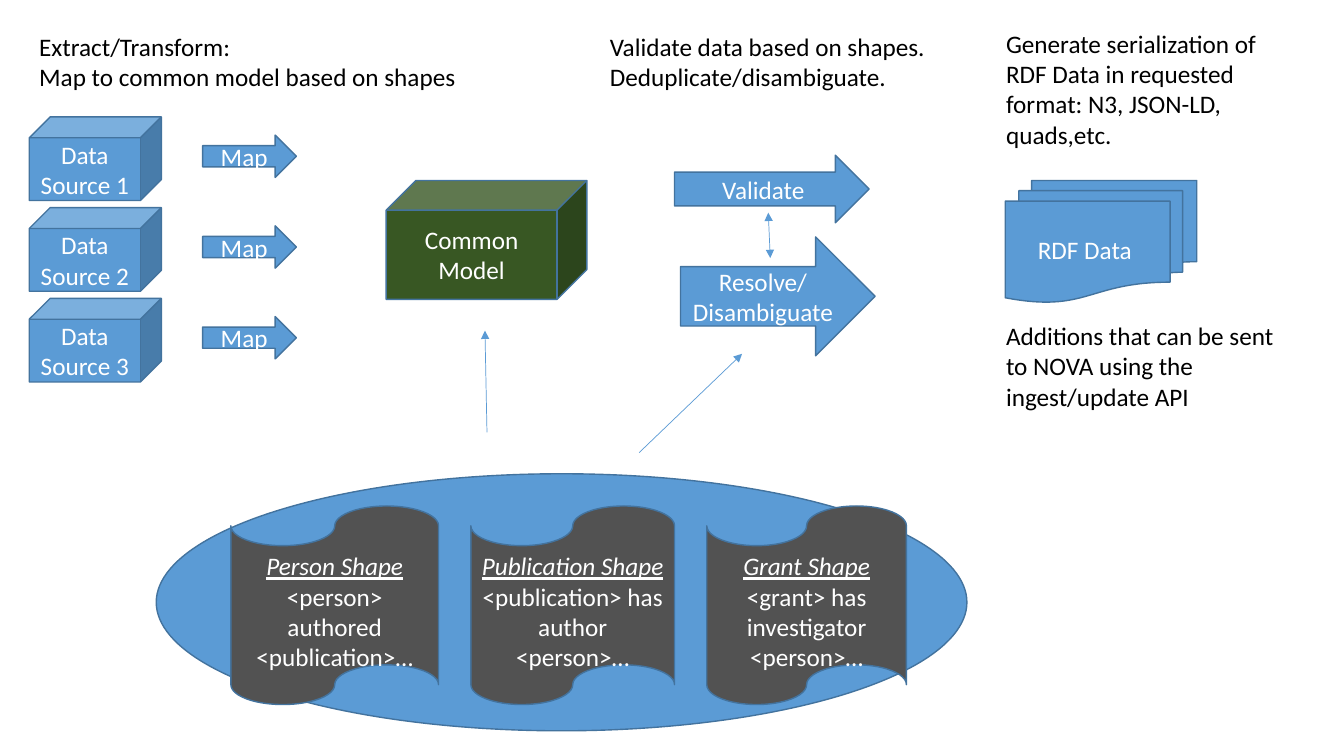
from pptx import Presentation
from pptx.dml.color import RGBColor
from pptx.enum.shapes import MSO_CONNECTOR, MSO_SHAPE
from pptx.enum.text import MSO_ANCHOR, PP_ALIGN
from pptx.oxml.ns import qn
from pptx.util import Inches, Pt
from lxml.etree import SubElement

COLORS = {"blue": "5B9BD5", "edge": "43739E", "green": "385723",
          "gray": "525252", "white": "FFFFFF", "black": "000000"}
FONT, SIZE = "Calibri", 18

# Content; boxes are left, top, width, height in inches
SOURCES = ["Data Source 1", "Data Source 2", "Data Source 3"]
SOURCE_TOP, MAP_TOP, ROW_STEP = 1.16, 1.34, 0.9

SHAPE_TAPES = [
    (2.29, 2.06, "Person Shape", "<person> authored <publication>…"),
    (4.67, 2.02, "Publication Shape", "<publication> has author <person>…"),
    (7.01, 1.98, "Grant Shape", "<grant> has investigator <person>…"),
]
STEPS = [
    (MSO_SHAPE.CUBE, (3.83, 1.79, 1.99, 1.18), "green", ["Common Model"]),
    (MSO_SHAPE.RIGHT_ARROW, (6.69, 1.54, 1.93, 0.67), "blue", ["Validate"]),
    (MSO_SHAPE.RIGHT_ARROW, (6.75, 2.35, 1.93, 1.18), "blue",
     ["Resolve/", "Disambiguate"]),
    (MSO_SHAPE.FLOWCHART_MULTIDOCUMENT, (9.97, 1.79, 1.9, 1.21), "blue",
     ["RDF Data "]),
]
NOTES = [  # box, wraps, lines
    ((0.29, 0.26, 4.38, 0.71), False,
     ["Extract/Transform:", "Map to common model based on shapes"]),
    ((5.95, 0.26, 3.42, 0.71), False,
     ["Validate data based on shapes.", "Deduplicate/disambiguate."]),
    ((9.88, 0.23, 3.11, 1.31), True,
     ["Generate serialization of RDF Data in requested format: "
      "N3, JSON-LD, quads,etc."]),
    ((9.88, 3.13, 3.11, 1.01), True,
     ["Additions that can be sent to NOVA using the ingest/update API"]),
]
LINKS = [  # from x, from y, to x, to y, arrowheads
    (7.62, 2.11, 7.64, 2.56, ["headEnd", "tailEnd"]),
    (4.83, 4.29, 4.81, 3.28, ["tailEnd"]),
    (6.34, 4.49, 7.36, 3.51, ["tailEnd"]),
]


def rgb(name):
    return RGBColor.from_string(COLORS[name])


def write(tf, lines, color, align, heading=False):
    for i, line in enumerate(lines):
        p = tf.paragraphs[0] if i == 0 else tf.add_paragraph()
        p.alignment = align
        r = p.add_run()
        r.text = line
        r.font.name, r.font.size = FONT, Pt(SIZE)
        r.font.color.rgb = rgb(color)
        if heading and i == 0:
            r.font.italic = r.font.underline = True


def add_block(s, kind, box, fill, lines=(), heading=False):
    sp = s.shapes.add_shape(kind, *map(Inches, box))
    sp.shadow.inherit = False
    sp.fill.solid()
    sp.fill.fore_color.rgb = rgb(fill)
    sp.line.color.rgb = rgb("edge")
    sp.line.width = Pt(1)
    tf = sp.text_frame
    tf.word_wrap = True
    tf.vertical_anchor = MSO_ANCHOR.TOP if heading else MSO_ANCHOR.MIDDLE
    write(tf, lines, "white", PP_ALIGN.CENTER, heading)


def add_note(s, box, wrap, lines):
    tf = s.shapes.add_textbox(*map(Inches, box)).text_frame
    tf.word_wrap = wrap
    write(tf, lines, "black", PP_ALIGN.LEFT)


def add_link(s, x1, y1, x2, y2, heads):
    c = s.shapes.add_connector(MSO_CONNECTOR.STRAIGHT,
                               *map(Inches, (x1, y1, x2, y2)))
    c.line.color.rgb = rgb("blue")
    c.line.width = Pt(0.5)
    ln = c.line._get_or_add_ln()
    for head in heads:
        SubElement(ln, qn("a:" + head), type="triangle")
    SubElement(c._element.spPr, qn("a:effectLst"))


def main():
    prs = Presentation()
    prs.slide_width, prs.slide_height = Inches(13.33), Inches(7.5)
    s = prs.slides.add_slide(prs.slide_layouts[6])

    # Library of shapes
    add_block(s, MSO_SHAPE.OVAL, (1.55, 4.7, 8.04, 2.55), "blue")
    for left, width, title, rule in SHAPE_TAPES:
        add_block(s, MSO_SHAPE.FLOWCHART_PUNCHED_TAPE,
                  (left, 5.02, width, 1.97), "gray", [title, rule], True)

    # Data sources, each with its mapping arrow
    for i, source in enumerate(SOURCES):
        dy = i * ROW_STEP
        add_block(s, MSO_SHAPE.CUBE, (0.29, SOURCE_TOP + dy, 1.31, 0.83),
                  "blue", [source])
        add_block(s, MSO_SHAPE.RIGHT_ARROW, (2.01, MAP_TOP + dy, 0.93, 0.42),
                  "blue", ["Map"])

    # Model, processing steps and output
    for step in STEPS:
        add_block(s, *step)

    # Links and captions
    for link in LINKS:
        add_link(s, *link)
    for note in NOTES:
        add_note(s, *note)

    prs.save("out.pptx")


if __name__ == "__main__":
    main()
